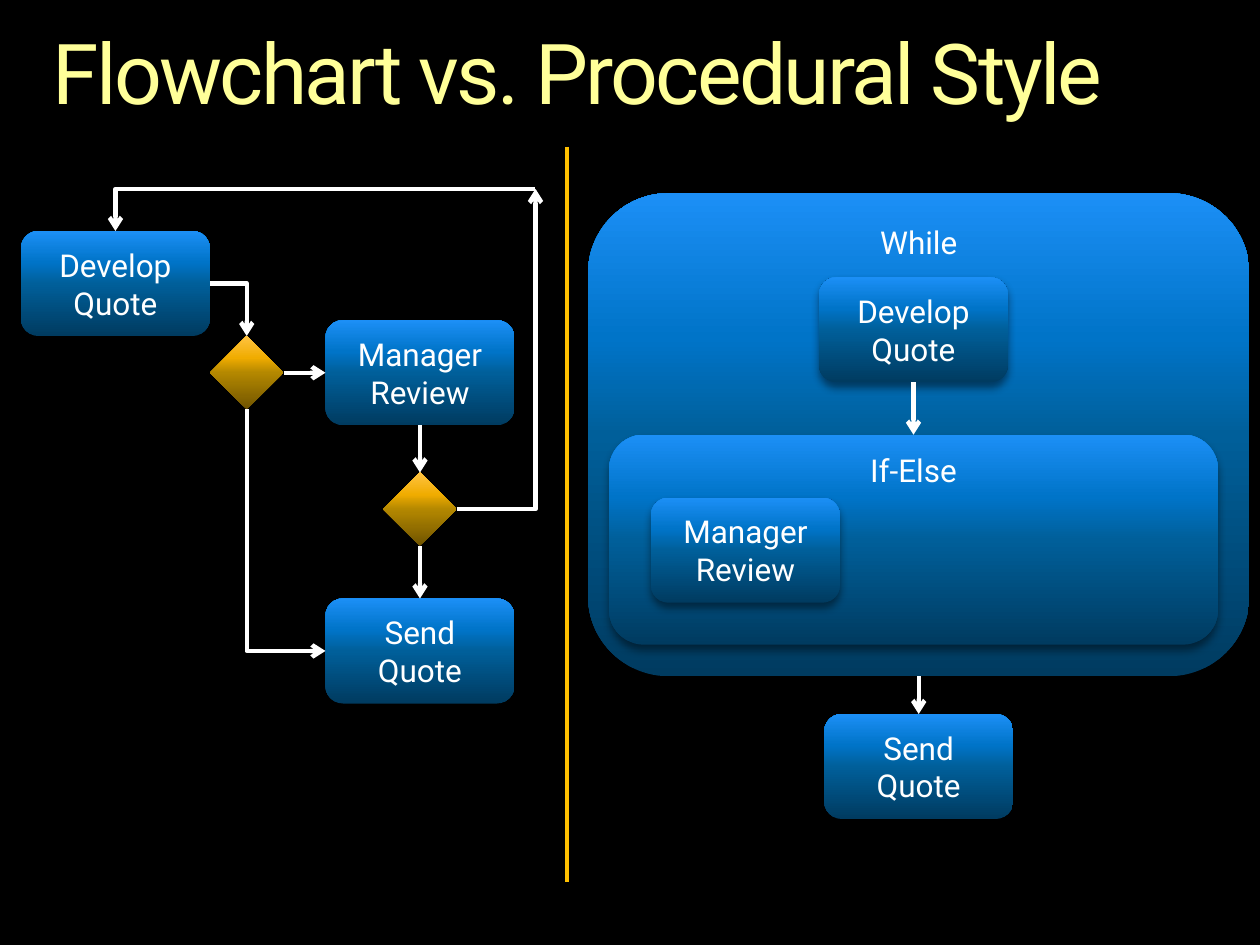
from lxml.etree import SubElement
from pptx import Presentation
from pptx.dml.color import RGBColor
from pptx.enum.shapes import MSO_CONNECTOR as Link, MSO_SHAPE as Shape
from pptx.enum.text import MSO_ANCHOR as Anchor, MSO_AUTO_SIZE as AutoSize, PP_ALIGN as Align
from pptx.oxml.ns import qn
from pptx.util import Pt

PX = 7620
BLUE = [(0, "003B60"), (50, "005F9A"), (70, "0074C8"), (100, "1C8FF6")]
GOLD = [(0, "705400"), (50, "B48800"), (70, "F0AC00"), (100, "FFC342")]
color = RGBColor.from_string


def add_step(kind, left, top, width, height, stops, lines=(), anchor=Anchor.MIDDLE):
    step = slide.shapes.add_shape(kind, left * PX, top * PX, width * PX, height * PX)
    step.line.fill.background()
    step.fill.gradient()
    step.fill.gradient_angle = 90
    stop_list = step._element.spPr.find(".//" + qn("a:gsLst"))
    stop_list.clear()
    for position, shade in stops:
        stop = SubElement(stop_list, qn("a:gs"), pos=str(position * 1000))
        SubElement(stop, qn("a:srgbClr"), val=shade)
    step.shadow.inherit = False
    effects = step._element.spPr.find(qn("a:effectLst"))
    shadow = SubElement(effects, qn("a:outerShdw"), blurRad=str(Pt(5)), dist=str(Pt(3)),
                        dir="5400000", rotWithShape="0")
    shadow_color = SubElement(shadow, qn("a:srgbClr"), val="000000")
    SubElement(shadow_color, qn("a:alpha"), val="45000")
    frame = step.text_frame
    frame.vertical_anchor = anchor
    if lines:
        frame.text = "\n".join(lines)
        for paragraph in frame.paragraphs:
            paragraph.alignment = Align.CENTER
            paragraph.font.name = "Roboto"
            paragraph.font.size = Pt(18)
            paragraph.font.color.rgb = color("FFFFFF")


def add_line(x1, y1, x2, y2, shade="FFFFFF", weight=2.5, preset="line", arrow=True):
    ends = [round(value * PX) for value in (x1, y1, x2, y2)]
    line = slide.shapes.add_connector(Link.STRAIGHT, *ends)
    line.line.color.rgb = color(shade)
    line.line.width = Pt(weight)
    properties = line._element.spPr
    properties.find(qn("a:prstGeom")).set("prst", preset)
    if arrow:
        SubElement(properties.find(qn("a:ln")), qn("a:tailEnd"), type="arrow")
    SubElement(properties, qn("a:effectLst"))
    return line


deck = Presentation()
deck.slide_width, deck.slide_height = 1200 * PX, 900 * PX
slide = deck.slides.add_slide(deck.slide_layouts[5])
slide.background.fill.solid()
slide.background.fill.fore_color.rgb = color("000000")

title = slide.shapes.title
title.left, title.top, title.width, title.height = 50 * PX, 30 * PX, 1100 * PX, 88 * PX
heading = title.text_frame
heading.text = "Flowchart vs. Procedural Style"
heading.word_wrap = True
heading.auto_size = AutoSize.SHAPE_TO_FIT_TEXT
heading.vertical_anchor = Anchor.TOP
heading.margin_left = heading.margin_top = heading.margin_right = heading.margin_bottom = 0
headline = heading.paragraphs[0]
headline.alignment = Align.LEFT
headline.line_spacing = 0.9
headline.font.name = "Roboto"
headline.font.size = Pt(48)
headline.font.color.rgb = color("FFFF99")
headline.runs[0]._r.get_or_add_rPr().set("spc", "-150")

for label, left, top, width, height in [
    ("While", 560, 184, 630, 460),
    ("If-Else", 580, 414, 580, 200),
]:
    add_step(Shape.ROUNDED_RECTANGLE, left, top, width, height, BLUE, [label], Anchor.TOP)

for lines, left, top in [
    (("Develop", "Quote"), 20, 220),
    (("Manager", "Review"), 310, 305),
    (("Send", "Quote"), 310, 570),
    (("Develop", "Quote"), 780, 264),
    (("Manager", "Review"), 620, 474),
    (("Send", "Quote"), 785, 680),
]:
    add_step(Shape.ROUNDED_RECTANGLE, left, top, 180, 100, BLUE, lines)

for left, top in [(200, 320), (365, 450)]:
    add_step(Shape.DIAMOND, left, top, 70, 70, GOLD)

for ends in [
    (270, 355, 310, 355),
    (400, 405, 400, 450),
    (400, 520, 400, 570),
    (870, 364, 870, 414),
    (875, 644, 875, 680),
]:
    add_line(*ends, preset="straightConnector1")

for ends in [(200, 270, 235, 320), (435, 485, 510, 180), (510, 180, 110, 220)]:
    add_line(*ends, preset="bentConnector2")

skip_x, skip_y, send_x, send_y = 235, 390, 310, 620
center_x, center_y = (skip_x + send_x) / 2, (skip_y + send_y) / 2
half_run, half_drop = (send_x - skip_x) / 2, (send_y - skip_y) / 2
skip_review = add_line(center_x + half_drop, center_y - half_run,
                       center_x - half_drop, center_y + half_run, preset="bentConnector2")
skip_review._element.spPr.find(qn("a:xfrm")).set("rot", "16200000")

add_line(540, 140, 540, 840, shade="FFC000", weight=2, arrow=False)

deck.save("out.pptx")
